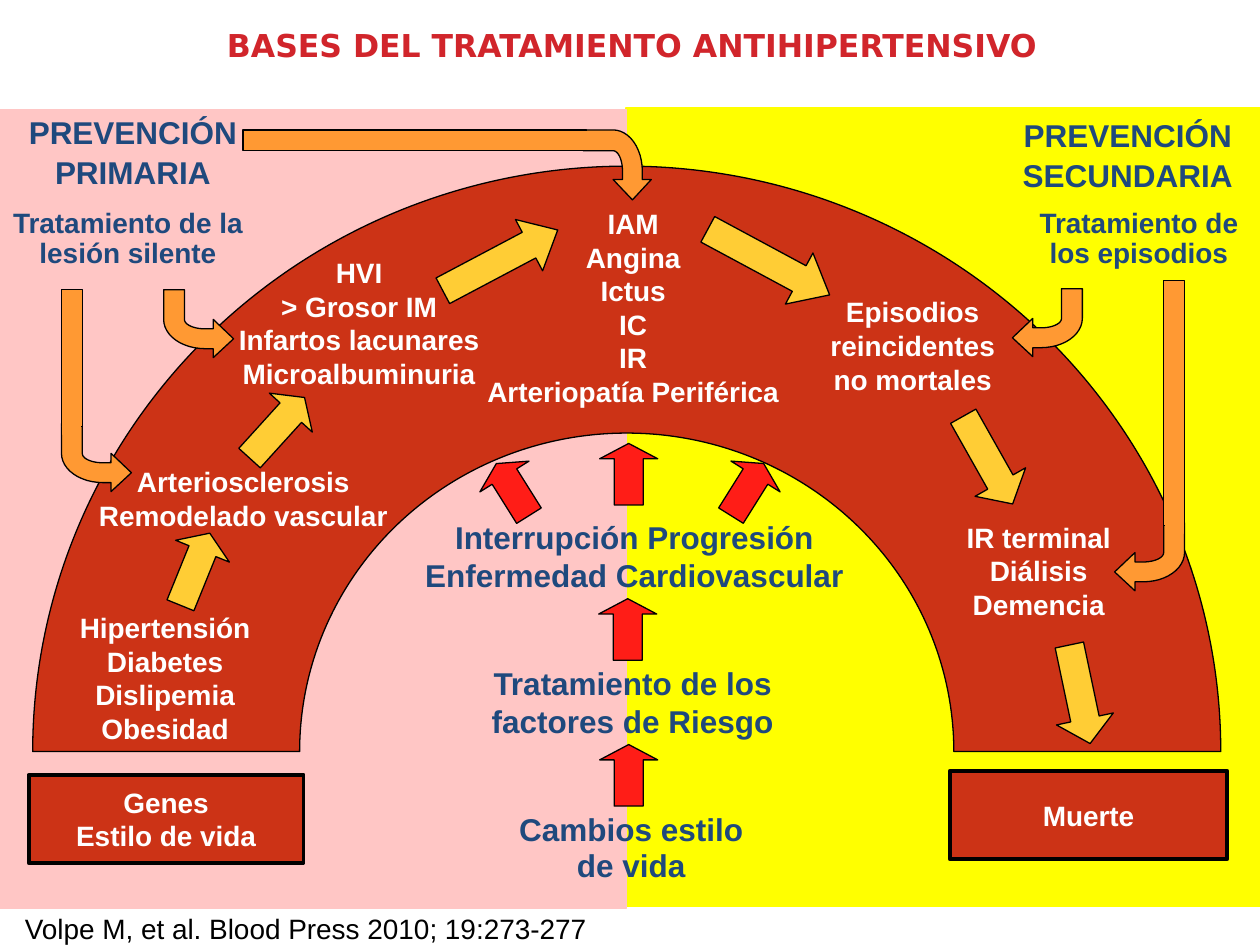
from math import cos, pi, sin

from pptx import Presentation
from pptx.dml.color import RGBColor
from pptx.enum.shapes import MSO_SHAPE
from pptx.enum.text import MSO_ANCHOR, MSO_AUTO_SIZE, PP_ALIGN
from pptx.util import Cm, Pt

WHITE = RGBColor(0xFF, 0xFF, 0xFF)
BLACK = RGBColor(0x00, 0x00, 0x00)
NAVY = RGBColor(0x1F, 0x49, 0x7D)
PINK = RGBColor(0xFF, 0xC6, 0xC5)
YELLOW = RGBColor(0xFF, 0xFF, 0x00)
BRICK = RGBColor(0xCC, 0x33, 0x16)
CRIMSON = RGBColor(0xD1, 0x25, 0x2B)
RED = RGBColor(0xFF, 0x1D, 0x17)
GOLD = RGBColor(0xFF, 0xCD, 0x35)
ORANGE = RGBColor(0xFF, 0x99, 0x33)

STEM = 0.42
STAGES = [
    ("Hipertensión\nDiabetes\nDislipemia\nObesidad",
     (0.69, 8.84, 3.96, 2.97), (2.69, 7.34, 1.17, 1.57), 22.1),
    ("Arteriosclerosis\nRemodelado vascular",
     (1.07, 5.9, 6.35, 1.63), (4.34, 4.45, 1.17, 1.65), 42.2),
    ("HVI\n> Grosor IM\nInfartos lacunares\nMicroalbuminuria",
     (3.89, 1.68, 5.38, 2.97), (8.84, 0.59, 1.17, 2.62), 62.1),
    ("IAM\nAngina\nIctus\nIC\nIR\nArteriopatía Periférica",
     (8.89, 0.69, 6.43, 4.32), (14.25, 0.54, 1.17, 2.79), 118.3),
    ("Episodios\nreincidentes\nno mortales",
     (15.57, 2.47, 4.34, 2.29), (18.67, 4.91, 1.17, 2.03), 150.6),
    ("IR terminal\nDiálisis\nDemencia",
     (17.98, 7.01, 4.6, 2.29), (20.52, 9.63, 1.17, 2.03), 168.1),
]
GOALS = [
    ("Tratamiento de los factores de Riesgo", (1.02, 4.32, 8.33, 1.78), {"before": 9}),
    ("Cambios estilo\nde vida", (0.99, 7.57, 8.33, 1.4), {"space": 0.5, "before": 10}),
    ("Interrupción Progresión\nEnfermedad Cardiovascular", (0, 1.37, 10.44, 1.78), {}),
]
STEPS = [(4.52, 6.07, 0), (4.5, 3.13, 0), (4.52, 0, 0), (2.18, 0.31, 327.9), (6.91, 0.31, 32.1)]


def inside(box, part):
    """Shift a part from its region's corner to the slide."""
    return (box[0] + part[0], box[1] + part[1], *part[2:])


def paint(shape, fill, line=BLACK, width=0.75):
    """Give a shape a flat fill and outline."""
    shape.shadow.inherit = False
    shape.fill.solid()
    shape.fill.fore_color.rgb = fill
    shape.line.color.rgb = line
    shape.line.width = Pt(width)
    return shape


def block(slide, box, fill, kind=MSO_SHAPE.RECTANGLE, **style):
    """Add a painted preset shape."""
    return paint(slide.shapes.add_shape(kind, *map(Cm, box)), fill, **style)


def write(shape, words, size=16, color=WHITE, font="Arial", bold=True,
          align=PP_ALIGN.CENTER, space=None, before=0, wrap=True,
          anchor=MSO_ANCHOR.MIDDLE, grow=True):
    """Fill a shape with one paragraph for each line of words."""
    frame = shape.text_frame
    frame.word_wrap = wrap
    frame.vertical_anchor = anchor
    frame.auto_size = MSO_AUTO_SIZE.SHAPE_TO_FIT_TEXT if grow else MSO_AUTO_SIZE.NONE
    for i, line in enumerate(words.split("\n")):
        para = frame.paragraphs[0] if i == 0 else frame.add_paragraph()
        para.alignment = align
        para.space_before = Pt(before)
        if space:
            para.line_spacing = space
        run = para.add_run()
        run.text = line
        run.font.size = Pt(size)
        run.font.name = font
        run.font.bold = bold
        run.font.color.rgb = color


def label(slide, box, words, **style):
    """Add a text box."""
    write(slide.shapes.add_textbox(*map(Cm, box)), words, **style)


def arrow(slide, box, turn, fill):
    """Add an up arrow whose head is a quarter of its height."""
    shape = block(slide, box, fill, MSO_SHAPE.UP_ARROW)
    shape.adjustments[1] = 0.25 * box[3] / box[2]
    shape.rotation = turn


def curve(wide, high, start, end):
    """List points on a quarter ellipse of the bend."""
    steps = [start + (end - start) * i / 12 for i in range(13)]
    return [(0.83 + wide * cos(a), 0.6 + high * sin(a)) for a in steps]


def bend(slide, x, y, stem=0, side=1, across=False):
    """Add a stem that runs down or across and bends into an arrowhead."""
    def place(u, v):
        return (x + v, y + u) if across else (x + side * u, y + v)

    def strip(u, v, wide, high, line):
        (ax, ay), (bx, by) = place(u, v), place(u + wide, v + high)
        block(slide, (min(ax, bx), min(ay, by), abs(bx - ax), abs(by - ay)), ORANGE, line=line)

    edge = [(1.41, 0.99), (1, 1.37), (1, 1.19), *curve(0.83, 0.59, pi / 2, pi),
            (0, 0), (STEM, 0), *curve(0.41, 0.19, pi, pi / 2), (1, 0.79), (1, 0.6)]
    dots = [tuple(map(Cm, place(u, v + stem))) for u, v in edge]
    pen = slide.shapes.build_freeform(*dots[0])
    pen.add_line_segments(dots[1:], close=True)
    paint(pen.convert_to_shape(), ORANGE)
    if stem:
        strip(0, 0, STEM, stem + 0.06, BLACK)
        strip(0.03, stem - 0.16, STEM - 0.06, 0.38, ORANGE)


def panel(slide, box, fill, words, part):
    """Draw one half of the backdrop with its heading."""
    block(slide, box, fill, line=fill)
    label(slide, inside(box, part), words, size=18, color=NAVY, space=0.6, before=10)


def arch(slide, box):
    """Draw the arch of disease stages and the arrows along it."""
    x, y, w, h = box
    ring = block(slide, (x, y, w, 2 * h), BRICK, MSO_SHAPE.BLOCK_ARC)
    ring.adjustments[2] = 0.228
    for words, part, tip, turn in STAGES:
        label(slide, inside(box, part), words, wrap=False, anchor=MSO_ANCHOR.TOP)
        arrow(slide, inside(box, tip), turn, GOLD)


def goals(slide, box):
    """Draw the ladder of goals under the arch."""
    for words, part, style in GOALS:
        label(slide, inside(box, part), words, size=18, color=NAVY, **style)
    for x, y, turn in STEPS:
        arrow(slide, inside(box, (x, y, 1.17, 1.24)), turn, RED)


def care(slide, box, words, part, bends):
    """Draw a treatment note and its bent arrows."""
    for x, y, style in bends:
        bend(slide, *inside(box, (x, y)), **style)
    label(slide, inside(box, part), words, color=NAVY, space=0.9, before=8)


def ending(slide, box, words):
    """Draw a framed box at a foot of the arch."""
    write(block(slide, box, BRICK, width=2.25), words, grow=False)


def main():
    """Build the slide."""
    deck = Presentation()
    deck.slide_width, deck.slide_height = Cm(25.4), Cm(19.05)
    slide = deck.slides.add_slide(deck.slide_layouts[6])
    first, second = (0, 2.21, 12.62, 16.1), (12.62, 2.18, 12.78, 16.1)
    panel(slide, second, YELLOW, "PREVENCIÓN\nSECUNDARIA", (7.55, 0.28, 5.13, 1.55))
    panel(slide, first, PINK, "PREVENCIÓN\nPRIMARIA", (0.18, 0.2, 5, 1.55))
    label(slide, (0.79, 0.41, 23.9, 1.63), "BASES DEL TRATAMIENTO ANTIHIPERTENSIVO", size=18,
          color=CRIMSON, font="DejaVu Sans", anchor=MSO_ANCHOR.TOP, grow=False)
    arch(slide, (0.66, 3.35, 23.95, 11.8))
    ending(slide, (0.58, 15.62, 5.54, 1.78), "Genes\nEstilo de vida")
    ending(slide, (19.15, 15.54, 5.59, 1.78), "Muerte")
    goals(slide, (7.57, 8.94, 10.44, 8.97))
    care(slide, first, "Tratamiento de la lesión silente", (0, 1.88, 5.16, 1.47),
         [(3.3, 3.63, {}), (1.24, 3.63, {"stem": 2.7}),
          (4.9, 0.41, {"stem": 6.86, "across": True})])
    care(slide, second, "Tratamiento de los episodios", (7.85, 1.91, 4.98, 1.47),
         [(9.2, 3.64, {"side": -1}), (11.26, 3.48, {"stem": 4.88, "side": -1})])
    label(slide, (0.25, 18.39, 11.99, 0.84), "Volpe M, et al. Blood Press 2010; 19:273-277",
          color=BLACK, bold=False, align=PP_ALIGN.LEFT, space=0.8, before=8,
          wrap=False, anchor=MSO_ANCHOR.TOP)
    deck.save("out.pptx")


if __name__ == "__main__":
    main()
